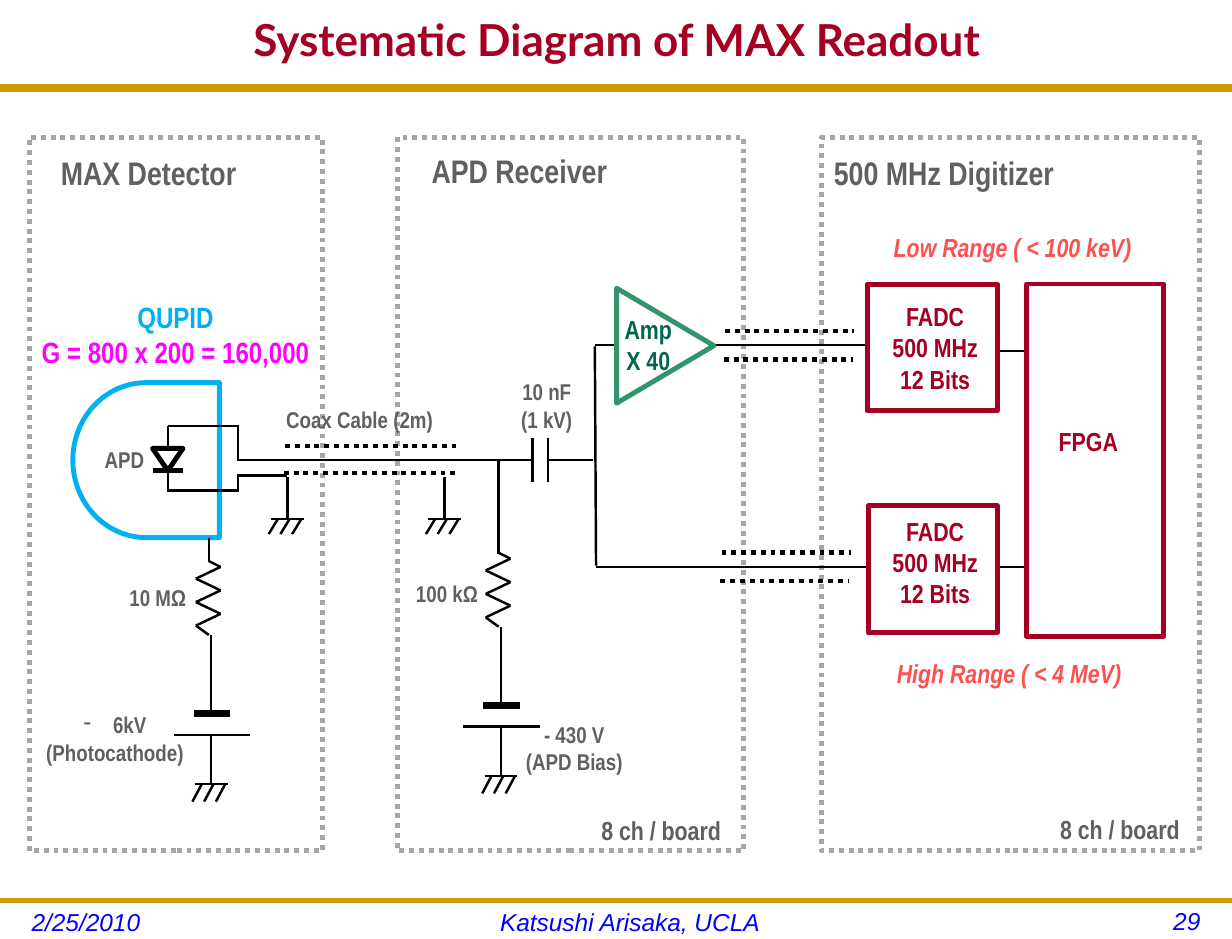
from dataclasses import dataclass
from itertools import pairwise

from lxml import etree
from pptx import Presentation
from pptx import util as u
from pptx.dml import color
from pptx.enum import dml, shapes, text
from pptx.oxml import ns


@dataclass(frozen=True)
class Theme:
    gold: str = "CC9900"
    crimson: str = "A50021"
    blue: str = "0000FF"
    gray: str = "606060"
    frame: str = "A6A6A6"
    sky: str = "00B0F0"
    magenta: str = "FF00FF"
    green: str = "32946A"
    dark_green: str = "00664D"
    coral: str = "FF5050"
    black: str = "000000"
    white: str = "FFFFFF"
    heading: str = "Lato"
    body: str = "Arial"
    label: str = "Arial Narrow"
    title_size: int = 27
    section_size: int = 20
    detector_size: int = 18
    block_size: int = 16
    footer_size: int = 15
    part_size: int = 14
    thin: float = 1.5
    thick: int = 3


theme = Theme()
INCH = 2.54
LEFT, CENTER, RIGHT = text.PP_ALIGN.LEFT, text.PP_ALIGN.CENTER, text.PP_ALIGN.RIGHT
DOTTED = dml.MSO_LINE.ROUND_DOT

deck = Presentation()
deck.slide_width, deck.slide_height = u.Cm(10.5 * INCH), u.Cm(8 * INCH)
page = deck.slides.add_slide(deck.slide_layouts[5])


def add_line(x1, y1, x2, y2, width=theme.thin, ink=theme.black, dash=None):
    ends = [u.Cm(INCH * value) for value in (x1, y1, x2, y2)]
    wire = page.shapes.add_connector(shapes.MSO_CONNECTOR.STRAIGHT, *ends)
    wire.line.color.rgb = color.RGBColor.from_string(ink)
    wire.line.width = u.Pt(width)
    if dash:
        wire.line.dash_style = dash
    etree.SubElement(wire._element.spPr, ns.qn("a:effectLst"))


def add_label(place, wording, size, ink=theme.gray, align=CENTER, wrap=False,
              font=theme.label, bold=True, italic=False):
    box = page.shapes.add_textbox(*[u.Cm(INCH * value) for value in place])
    frame = box.text_frame
    frame.text = wording
    frame.word_wrap = wrap
    frame.auto_size = text.MSO_AUTO_SIZE.NONE if wrap else text.MSO_AUTO_SIZE.SHAPE_TO_FIT_TEXT
    for para in frame.paragraphs:
        para.alignment = align
        for span in para.runs:
            span.font.name, span.font.size = font, u.Pt(size)
            span.font.bold, span.font.italic = bold, italic
            span.font.color.rgb = color.RGBColor.from_string(ink)
    return box


for y, width in ((0.75, 4.5), (7.67, 3)):
    add_line(0, y, 10.5, y, width, theme.gold)

title = page.shapes.title
title.left, title.top = u.Cm(0.17 * INCH), u.Cm(0)
title.width, title.height = u.Cm(10.17 * INCH), u.Cm(0.75 * INCH)
title.text_frame.text = "Systematic Diagram of MAX Readout"
title.text_frame.vertical_anchor = text.MSO_ANCHOR.MIDDLE
para = title.text_frame.paragraphs[0]
para.alignment, para.line_spacing = CENTER, 0.8
span = para.runs[0]
span.font.name, span.font.size, span.font.bold = theme.heading, u.Pt(theme.title_size), True
span.font.color.rgb = color.RGBColor.from_string(theme.crimson)

for left, top, width, wording, align in (
    (0.17, 7.68, 2.08, "2/25/2010", LEFT),
    (2.33, 7.68, 6.08, "Katsushi Arisaka, UCLA", CENTER),
    (8.5, 7.67, 1.83, "29", RIGHT),
):
    add_label((left, top, width, 0.32), wording, theme.footer_size, theme.blue, align,
              wrap=True, font=theme.body, bold=False, italic=True)

wires = [
    (2.04, 3.92, 4.53, 3.92), (5.07, 2.94, 7.49, 2.94), (5.08, 4.82, 5.07, 2.95),
    (5.07, 2.94, 5.25, 2.94), (5.08, 4.83, 7.5, 4.83), (8.82, 4.83, 8.42, 4.83),
    (8.82, 2.99, 8.42, 2.99), (4.25, 4.52, 4.25, 3.92), (4.67, 3.92, 5.05, 3.92),
    (4.54, 3.73, 4.54, 4.11), (4.67, 3.73, 4.67, 4.11),
]

outlines = shapes.MSO_SHAPE
for kind, place, turn, fill, ink, dash in (
    (outlines.RECTANGLE, (0.25, 1.17, 2.5, 6.08), 0, None, theme.frame, DOTTED),
    (outlines.RECTANGLE, (3.39, 1.17, 2.95, 6.08), 0, None, theme.frame, DOTTED),
    (outlines.RECTANGLE, (7, 1.17, 3.22, 6.08), 0, None, theme.frame, DOTTED),
    (None, wires, 0, None, None, None),
    (outlines.FLOWCHART_DELAY, (0.62, 3.26, 1.25, 1.32), 180, None, theme.sky, None),
    (outlines.ISOSCELES_TRIANGLE, (5.18, 2.53, 0.98, 0.83), 90, theme.white, theme.green, None),
    (outlines.ISOSCELES_TRIANGLE, (1.3, 3.82, 0.26, 0.19), 180, theme.white, theme.black, None),
    (outlines.RECTANGLE, (7.39, 2.42, 1.11, 1.08), 0, theme.white, theme.crimson, None),
    (outlines.RECTANGLE, (7.4, 4.31, 1.1, 1.08), 0, theme.white, theme.crimson, None),
    (outlines.RECTANGLE, (8.75, 2.42, 1.17, 3), 0, theme.white, theme.crimson, None),
):
    if kind is None:
        for wire in place:
            add_line(*wire)
        continue
    shape = page.shapes.add_shape(kind, *[u.Cm(INCH * value) for value in place])
    shape.shadow.inherit = False
    shape.rotation = turn
    shape.line.color.rgb = color.RGBColor.from_string(ink)
    shape.line.width = u.Pt(theme.thick)
    if dash:
        shape.line.dash_style = dash
    if fill:
        shape.fill.solid()
        shape.fill.fore_color.rgb = color.RGBColor.from_string(fill)
    else:
        shape.fill.background()

add_line(1.3, 4.01, 1.56, 4.01, theme.thick)
for apd_wire in (
    (1.43, 3.63, 1.43, 3.81), (1.43, 3.99, 1.43, 4.19), (1.43, 4.18, 2.04, 4.18),
    (1.43, 3.63, 2.04, 3.63), (2.03, 3.63, 2.03, 3.93), (2.03, 4.05, 2.03, 4.19),
    (2.02, 4.05, 2.45, 4.05),
):
    add_line(*apd_wire)

for x, y, length in (
    (2.43, 3.8, 1.5), (2.42, 4.03, 1.5),
    (6.18, 2.82, 1.1), (6.17, 3.06, 1.1),
    (6.15, 4.71, 1.1), (6.14, 4.95, 1.1),
):
    add_line(x, y, x + length, y, theme.thick, dash=DOTTED)

for x, top in ((1.8, 4.58), (4.27, 4.51)):
    zigzag = [(x - 0.02, top + 0.2)]
    zigzag += [(x + (-0.13 if bend % 2 else 0.08), top + 0.25 + 0.1 * bend) for bend in range(6)]
    zigzag += [(x - 0.02, top + 0.83)]
    for start, end in pairwise(zigzag):
        add_line(*start, *end)
    add_line(x - 0.02, top, x - 0.02, top + 0.21)
    add_line(x, top + 0.83, x, top + 1.47)
    add_line(x - 0.15, top + 1.5, x + 0.16, top + 1.5, 4)
    add_line(x - 0.32, top + 1.68, x + 0.33, top + 1.68)

for x, y, rise, drop in (
    (2.45, 4.42, 0.36, 0.13), (3.79, 4.42, 0.36, 0.13),
    (1.8, 6.68, 0.42, 0.15), (4.27, 6.61, 0.42, 0.15),
):
    add_line(x, y - rise, x, y)
    add_line(x - 0.14, y, x + 0.14, y)
    for shift in (-0.08, 0.02, 0.12):
        add_line(x + shift, y, x + shift - 0.08, y + drop)

add_label((0.42, 1.25, 2.58, 0.44), "MAX Detector", theme.section_size, align=LEFT, wrap=True)
add_label((3.58, 1.24, 1.7, 0.44), "APD Receiver", theme.section_size, align=LEFT)
add_label((7, 1.25, 2.09, 0.44), "500 MHz Digitizer", theme.section_size)

for place, wording in (
    ((4.38, 6.09, 1.03, 0.57), "- 430 V\n(APD Bias)"),
    ((0.99, 4.92, 0.71, 0.34), "10 MΩ"),
    ((0.79, 3.75, 0.54, 0.34), "APD"),
    ((3.43, 4.89, 0.76, 0.34), "100 kΩ"),
    ((4.34, 3.17, 0.64, 0.57), "10 nF\n(1 kV)"),
    ((2.33, 3.41, 1.47, 0.34), "Coax Cable (2m)"),
):
    add_label(place, wording, theme.part_size)

photocathode = add_label((0.29, 6.01, 1.38, 0.57), "6kV\n(Photocathode)", theme.part_size)
bullet = photocathode.text_frame.paragraphs[0]._p.get_or_add_pPr()
bullet.set("marL", str(u.Cm(0.64)))
bullet.set("indent", str(-u.Cm(0.64)))
etree.SubElement(bullet, ns.qn("a:buFontTx"))
etree.SubElement(bullet, ns.qn("a:buChar")).set("char", "-")

qupid = add_label((0.24, 2.5, 2.51, 0.71), "QUPID\nG = 800 x 200 = 160,000",
                  theme.detector_size, theme.sky)
gain = qupid.text_frame.paragraphs[1].runs[0]
gain.font.color.rgb = color.RGBColor.from_string(theme.magenta)

for place, wording, ink, italic in (
    ((5.22, 2.62, 0.61, 0.64), "Amp\nX 40", theme.dark_green, False),
    ((7.5, 2.51, 0.94, 0.91), "FADC\n500 MHz\n12 Bits", theme.crimson, False),
    ((7.5, 4.34, 0.94, 0.91), "FADC\n500 MHz\n12 Bits", theme.crimson, False),
    ((8.92, 3.58, 0.71, 0.37), "FPGA", theme.crimson, False),
    ((7.48, 1.92, 2.3, 0.37), "Low Range ( < 100 keV)", theme.coral, True),
    ((7.51, 5.55, 2.18, 0.37), "High Range ( < 4 MeV)", theme.coral, True),
    ((5.02, 6.89, 1.23, 0.37), "8 ch / board", theme.gray, False),
    ((8.93, 6.88, 1.23, 0.37), "8 ch / board", theme.gray, False),
):
    add_label(place, wording, theme.block_size, ink, italic=italic)

deck.save("out.pptx")
